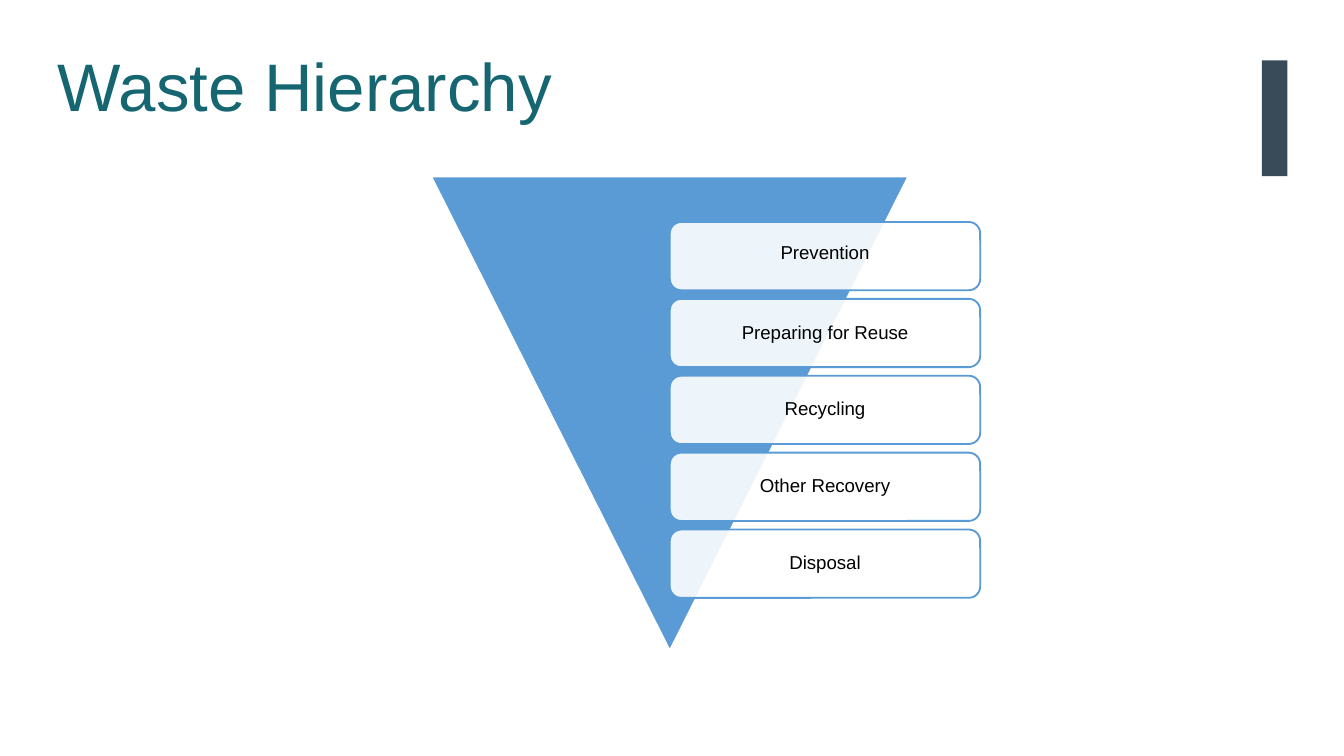
from lxml import etree
from pptx import Presentation
from pptx.dml.color import RGBColor
from pptx.enum import shapes, text
from pptx.oxml.ns import qn
from pptx.util import Pt

TEAL = RGBColor(0x15, 0x66, 0x70)
BLUE = RGBColor(0x5B, 0x9B, 0xD5)
SLATE = RGBColor(0x39, 0x4A, 0x58)
WHITE = RGBColor(0xFF, 0xFF, 0xFF)
BLACK = RGBColor(0, 0, 0)

LEVELS = ["Prevention", "Preparing for Reuse", "Recycling",
          "Other Recovery", "Disposal"]
AXIS = 358.8  # tip of the triangle and left edge of the level boxes
TRIANGLE_SIZE = 255.6
LEVEL_TOP, LEVEL_PITCH = 118.9, 41.2
LEVEL_WIDTH, LEVEL_HEIGHT = 166.3, 36.6


def write_text(holder, wording, *, size, color, align, anchor,
               insets=(0, 0, 0, 0), line_spacing=1.0):
    frame = holder.text_frame
    frame.word_wrap = True
    frame.auto_size = text.MSO_AUTO_SIZE.NONE
    frame.vertical_anchor = anchor
    (frame.margin_left, frame.margin_top,
     frame.margin_right, frame.margin_bottom) = map(Pt, insets)
    paragraph = frame.paragraphs[0]
    paragraph.alignment = align
    paragraph.line_spacing = line_spacing
    paragraph.space_before = Pt(0)
    run = paragraph.add_run()
    run.text = wording
    run.font.name = "Arial"
    run.font.size = Pt(size)
    run.font.color.rgb = color


def add_block(slide, kind, left, top, width, height, fill,
              line=None, opacity=100):
    block = slide.shapes.add_shape(
        kind, Pt(left), Pt(top), Pt(width), Pt(height))
    block.shadow.inherit = False
    block.fill.solid()
    block.fill.fore_color.rgb = fill
    if opacity < 100:
        fill_color = block.fill._xPr.find(qn("a:solidFill"))[0]
        etree.SubElement(fill_color, qn("a:alpha"), val=str(opacity * 1000))
    if line is None:
        block.line.fill.background()
    else:
        block.line.color.rgb = line
        block.line.width = Pt(1)
    return block


def add_title(slide, wording):
    title = slide.shapes.title
    title.left, title.top = Pt(31), Pt(23)
    title.width, title.height = Pt(619), Pt(44)
    write_text(title, wording, size=36, color=TEAL,
               align=text.PP_ALIGN.LEFT, anchor=text.MSO_ANCHOR.BOTTOM)


def add_level(slide, index, wording):
    level = add_block(
        slide, shapes.MSO_SHAPE.ROUNDED_RECTANGLE,
        AXIS, LEVEL_TOP + index * LEVEL_PITCH, LEVEL_WIDTH, LEVEL_HEIGHT,
        WHITE, line=BLUE, opacity=90)
    # The top level's wording sits slightly above centre
    insets = (0, 0, 0, 3) if index == 0 else (3, 3, 3, 3)
    write_text(level, wording, size=10, color=BLACK,
               align=text.PP_ALIGN.CENTER, anchor=text.MSO_ANCHOR.MIDDLE,
               insets=insets, line_spacing=0.9)


def main():
    deck = Presentation()
    deck.slide_width, deck.slide_height = Pt(720), Pt(405)
    slide = deck.slides.add_slide(deck.slide_layouts[5])

    # Plain brand marker
    add_block(slide, shapes.MSO_SHAPE.RECTANGLE, 676, 32.4, 13.7, 62, SLATE)

    add_title(slide, "Waste Hierarchy")

    # Inverted triangle
    triangle = add_block(
        slide, shapes.MSO_SHAPE.ISOSCELES_TRIANGLE,
        AXIS - TRIANGLE_SIZE / 2, 94.6, TRIANGLE_SIZE, TRIANGLE_SIZE - 1.6,
        BLUE, line=WHITE)
    triangle.rotation = 180

    # Hierarchy levels, most preferred first
    for index, wording in enumerate(LEVELS):
        add_level(slide, index, wording)

    deck.save("out.pptx")


if __name__ == "__main__":
    main()
